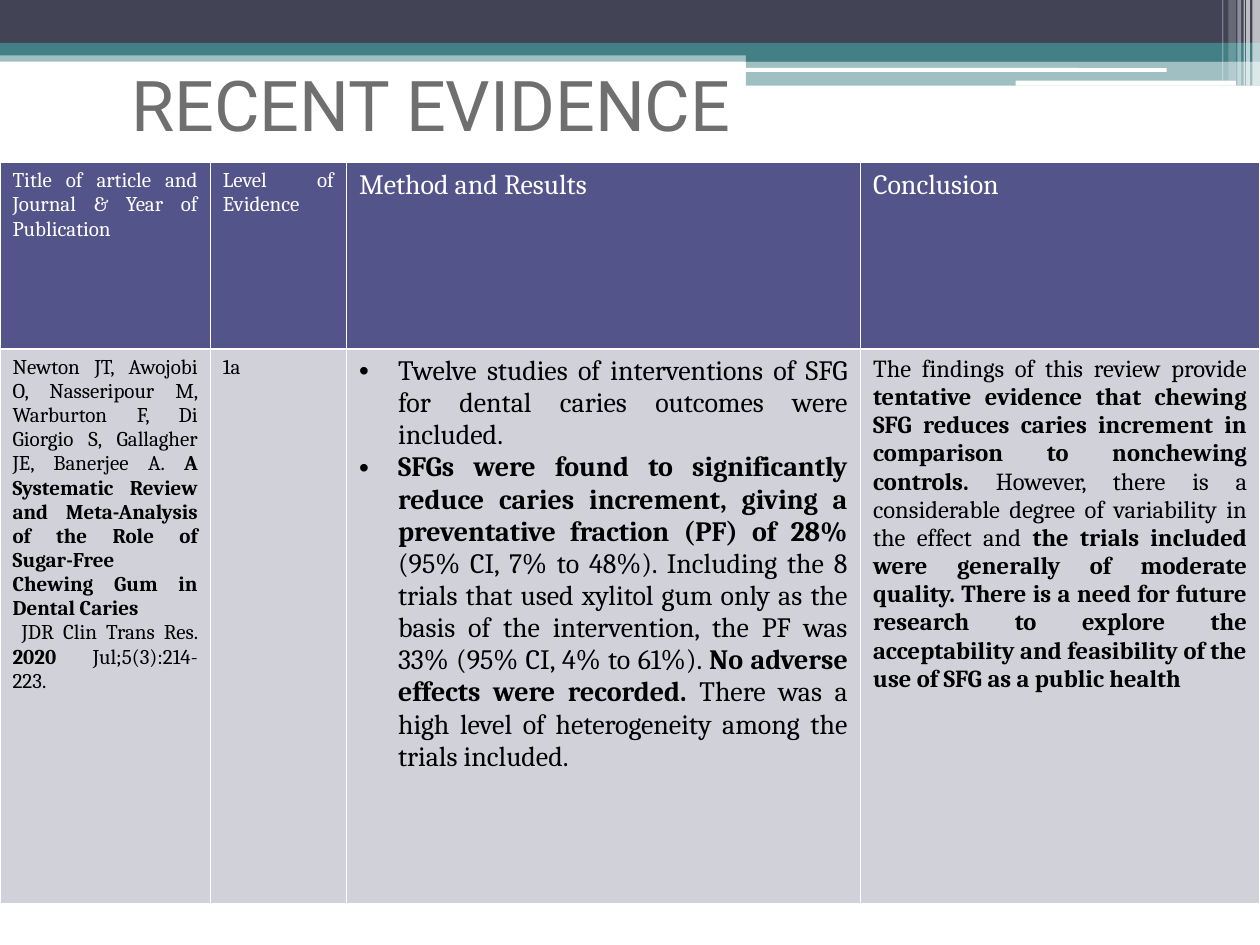
from dataclasses import dataclass

from lxml import etree
from pptx import Presentation
from pptx.dml.color import RGBColor
from pptx.enum import shapes, text
from pptx.oxml import ns
from pptx.util import Inches, Pt


@dataclass(frozen=True)
class Theme:
    dark: str = "424456"
    teal: str = "438086"
    white: str = "FFFFFF"
    black: str = "000000"
    title: str = "6F6F6F"
    header: str = "53548A"
    body: str = "D1D1DA"
    title_font: str = "Roboto"
    table_font: str = "Cambria"
    title_size: int = 40
    large: int = 16
    medium: int = 14
    small: int = 12


theme = Theme()


def add_text(p, content, *, size, color, font=theme.table_font, bold=False,
             align=text.PP_ALIGN.JUSTIFY):
    p.alignment = align
    r = p.add_run()
    r.text = content
    r.font.size = Pt(size)
    r.font.name = font
    r.font.bold = bold
    r.font.color.rgb = RGBColor.from_string(color)


def add_band(s, box, color, alpha=100, kind=shapes.MSO_SHAPE.RECTANGLE):
    sp = s.shapes.add_shape(kind, *map(Inches, box))
    sp.shadow.inherit = False
    sp.line.fill.background()
    sp.fill.solid()
    sp.fill.fore_color.rgb = RGBColor.from_string(color)
    if alpha < 100:
        clr = sp._element.spPr.find(".//" + ns.qn("a:srgbClr"))
        etree.SubElement(clr, ns.qn("a:alpha"), val=str(alpha * 1000))


prs = Presentation()
prs.slide_width, prs.slide_height = Inches(10), Inches(7.5)
s = prs.slides.add_slide(prs.slide_layouts[5])

# Top bands
for box, color, alpha in [
    ((0, 0.4, 10, 0.09), theme.teal, 50),
    ((0, 0, 10, 0.34), theme.dark, 100),
    ((0, 0.34, 10, 0.1), theme.teal, 100),
    ((5.92, 0.39, 4.08, 0.1), theme.teal, 100),
    ((5.92, 0.48, 4.08, 0.2), theme.teal, 50),
]:
    add_band(s, box, color, alpha)
for box in [(5.91, 0.54, 3.35, 0.03), (8.06, 0.64, 1.75, 0.04)]:
    add_band(s, box, theme.white, kind=shapes.MSO_SHAPE.ROUNDED_RECTANGLE)

# Translucent stripes in the corner: left, width, height, opacity
for left, width, height, alpha in [
    (9.94, 0.06, 0.68, 65), (9.89, 0.03, 0.68, 65), (9.87, 0.01, 0.68, 60),
    (9.82, 0.03, 0.68, 40), (9.75, 0.06, 0.64, 20), (9.7, 0.01, 0.64, 30),
]:
    add_band(s, (left, 0, width, height), theme.white, alpha)

# Title, in front of the bands
title = s.shapes.title
title.left, title.top, title.width, title.height = map(Inches, (-1.58, 0.2, 10, 1.25))
title.text_frame.vertical_anchor = text.MSO_ANCHOR.MIDDLE
add_text(title.text_frame.paragraphs[0], "RECENT EVIDENCE", size=theme.title_size,
         color=theme.title, font=theme.title_font, align=text.PP_ALIGN.CENTER)
title._element.getparent().append(title._element)

# Table content: each cell is a size and paragraphs of (text, bold) runs
header = [
    (theme.small, [[("Title of article and Journal & Year of Publication", False)]]),
    (theme.small, [[("Level of Evidence", False)]]),
    (theme.large, [[("Method and Results", False)]]),
    (theme.large, [[("Conclusion", False)]]),
]
study = [
    (theme.small, [
        [("Newton JT, Awojobi O, Nasseripour M, Warburton F, Di Giorgio S, "
          "Gallagher JE, Banerjee A. ", False),
         ("A Systematic Review and Meta-Analysis of the Role of Sugar-Free "
          "Chewing Gum in Dental Caries", True)],
        [(" JDR Clin Trans Res. ", False), ("2020 ", True),
         ("Jul;5(3):214-223. ", False)],
    ]),
    (theme.small, [[("1a", False)]]),
    (theme.large, [
        [("Twelve studies of interventions of SFG for dental caries outcomes "
          "were included.", False)],
        [("SFGs were found to significantly reduce caries increment, giving a "
          "preventative fraction (PF) of 28% ", True),
         ("(95% CI, 7% to 48%). Including the 8 trials that used xylitol gum only "
          "as the basis of the intervention, the PF was 33% (95% CI, 4% to 61%). ", False),
         ("No adverse effects were recorded. ", True),
         ("There was a high level of heterogeneity among the trials included. ", False)],
    ]),
    (theme.medium, [
        [("The findings of this review provide ", False),
         ("tentative evidence that chewing SFG reduces caries increment in "
          "comparison to nonchewing controls. ", True),
         ("However, there is a considerable degree of variability in the effect and ", False),
         ("the trials included were generally of moderate quality. There is a need "
          "for future research to explore the acceptability and feasibility of the "
          "use of SFG as a public health", True)],
    ]),
]
col_widths, row_heights = (1.67, 1.08, 4.08, 3.17), (1.48, 4.4)
rows = [(header, theme.header, theme.white), (study, theme.body, theme.black)]
METHOD_COL = 2

# Evidence table
table = s.shapes.add_table(len(rows), len(col_widths), Inches(0), Inches(1.29),
                           Inches(sum(col_widths)), Inches(sum(row_heights))).table
for col, width in zip(table.columns, col_widths):
    col.width = Inches(width)
for row, height in zip(table.rows, row_heights):
    row.height = Inches(height)

for i, (cells, fill, color) in enumerate(rows):
    for j, (size, paragraphs) in enumerate(cells):
        cell = table.cell(i, j)
        tcPr = cell._tc.get_or_add_tcPr()
        for side in ("lnL", "lnR", "lnT", "lnB"):
            ln = etree.SubElement(tcPr, ns.qn("a:" + side), w=str(Pt(1)))
            solid = etree.SubElement(ln, ns.qn("a:solidFill"))
            etree.SubElement(solid, ns.qn("a:srgbClr"), val=theme.white)
        cell.fill.solid()
        cell.fill.fore_color.rgb = RGBColor.from_string(fill)

        tf = cell.text_frame
        for n, runs in enumerate(paragraphs):
            p = tf.add_paragraph() if n else tf.paragraphs[0]
            for content, bold in runs:
                add_text(p, content, size=size, color=color, bold=bold)
            if i and j == METHOD_COL:
                pPr = p._p.get_or_add_pPr()
                pPr.set("marL", str(Inches(0.31)))
                pPr.set("indent", str(Inches(-0.31)))
                etree.SubElement(pPr, ns.qn("a:buFont"), typeface="Arial")
                etree.SubElement(pPr, ns.qn("a:buChar"), char="•")

prs.save("out.pptx")
